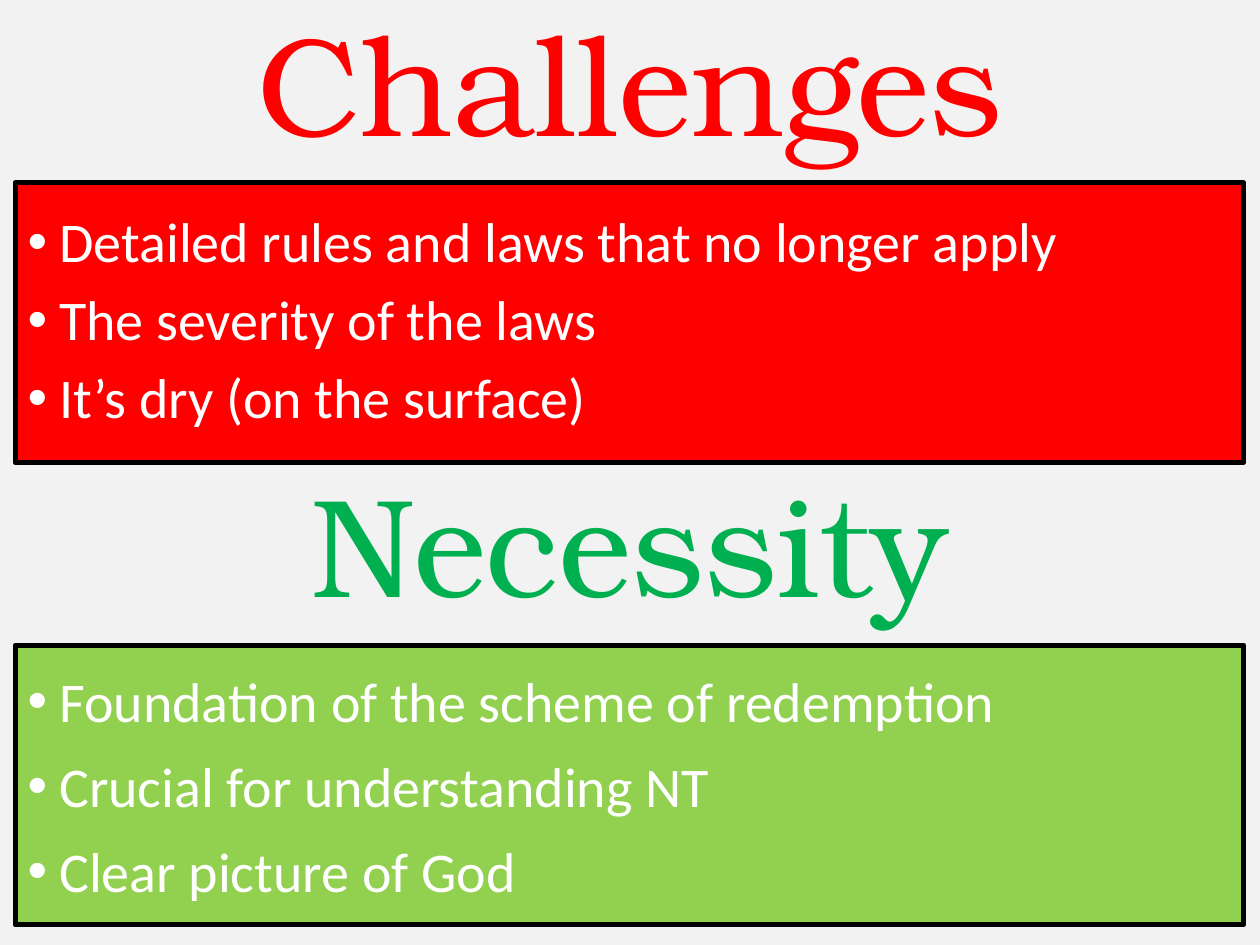
from lxml.etree import SubElement
from pptx import Presentation
from pptx.dml.color import RGBColor
from pptx.enum.text import MSO_ANCHOR, MSO_AUTO_SIZE, PP_ALIGN
from pptx.oxml.ns import qn
from pptx.util import Inches, Pt

RED = RGBColor(0xFF, 0x00, 0x00)
GREEN = RGBColor(0x00, 0xB0, 0x50)
LIME = RGBColor(0x92, 0xD0, 0x50)
WHITE = RGBColor(0xFF, 0xFF, 0xFF)
BLACK = RGBColor(0x00, 0x00, 0x00)
PALE_GRAY = RGBColor(0xF2, 0xF2, 0xF2)

WIDTH, HEIGHT = 10, 7.5
PANEL_LEFT, PANEL_WIDTH, PANEL_HEIGHT = 0.12, 9.75, 2.22


class SlideBuilder:
    heading_font, heading_size = "TeX Gyre Bonum", Pt(80)
    list_font, list_size = "Calibri", Pt(32)
    indent = Inches(0.25)

    def __init__(self, deck):
        self.page = deck.slides.add_slide(deck.slide_layouts[3])
        background = self.page.background.fill
        background.solid()
        background.fore_color.rgb = PALE_GRAY

    def place(self, box, left, top, width, height):
        box.left, box.top = Inches(left), Inches(top)
        box.width, box.height = Inches(width), Inches(height)
        frame = box.text_frame
        frame.word_wrap = True
        frame.auto_size = MSO_AUTO_SIZE.NONE
        frame.vertical_anchor = MSO_ANCHOR.MIDDLE
        return frame

    def add_span(self, para, text, font, size, color):
        span = para.add_run()
        span.text = text
        span.font.name = font
        span.font.size = size
        span.font.color.rgb = color

    def heading(self, box, text, color, top, height):
        para = self.place(box, 0, top, WIDTH, height).paragraphs[0]
        para.alignment = PP_ALIGN.CENTER
        para.line_spacing = 0.9
        self.add_span(para, text, self.heading_font, self.heading_size, color)

    def bullet(self, para):
        properties = para._p.get_or_add_pPr()
        properties.set("marL", str(self.indent))
        properties.set("indent", str(-self.indent))
        SubElement(properties, qn("a:buFont"), typeface="Arial")
        SubElement(properties, qn("a:buChar"), char="•")

    def panel(self, box, items, fill, top, line_spacing):
        frame = self.place(box, PANEL_LEFT, top, PANEL_WIDTH, PANEL_HEIGHT)
        box.fill.solid()
        box.fill.fore_color.rgb = fill
        box.line.color.rgb = BLACK
        box.line.width = Pt(3)
        for number, item in enumerate(items):
            para = frame.add_paragraph() if number else frame.paragraphs[0]
            para.line_spacing = line_spacing
            para.space_before = Pt(10)
            self.bullet(para)
            self.add_span(para, item, self.list_font, self.list_size, WHITE)


def main():
    deck = Presentation()
    deck.slide_width, deck.slide_height = Inches(WIDTH), Inches(HEIGHT)
    builder = SlideBuilder(deck)
    title, challenges, necessity = builder.page.placeholders

    builder.heading(title, "Challenges", RED, 0, 1.45)
    builder.panel(challenges, [
        "Detailed rules and laws that no longer apply",
        "The severity of the laws",
        "It’s dry (on the surface)",
    ], RED, 1.45, 0.9)
    builder.panel(necessity, [
        "Foundation of the scheme of redemption",
        "Crucial for understanding NT",
        "Clear picture of God",
    ], LIME, 5.12, 1.0)
    subtitle = builder.page.shapes.add_textbox(0, 0, 0, 0)
    builder.heading(subtitle, "Necessity", GREEN, 3.77, 1.22)

    deck.save("out.pptx")


if __name__ == "__main__":
    main()
